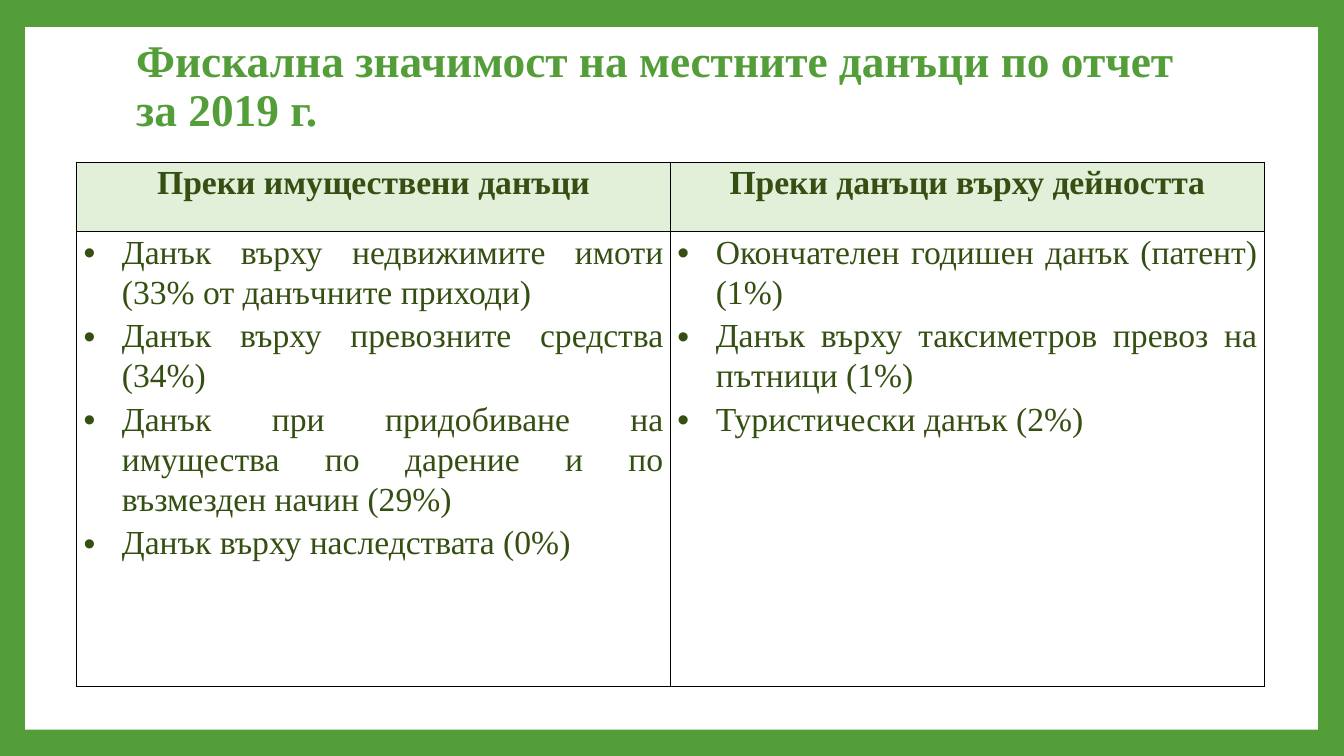
from dataclasses import dataclass

from lxml.etree import SubElement
from pptx import Presentation
from pptx.dml.color import RGBColor
from pptx.enum.shapes import MSO_SHAPE
from pptx.enum.text import MSO_ANCHOR, MSO_AUTO_SIZE, PP_ALIGN
from pptx.oxml import parse_xml
from pptx.oxml.ns import nsdecls, qn
from pptx.util import Inches, Pt


@dataclass(frozen=True)
class Theme:
    green: RGBColor = RGBColor(0x54, 0x9E, 0x39)
    dark_green: RGBColor = RGBColor(0x35, 0x4F, 0x12)
    pale_green: RGBColor = RGBColor(0xE2, 0xEF, 0xD9)
    white: RGBColor = RGBColor(0xFF, 0xFF, 0xFF)
    border: RGBColor = RGBColor(0, 0, 0)
    font: str = "Times New Roman"
    title_size: float = 32.4
    table_size: float = 24


@dataclass(frozen=True)
class TaxGroup:
    heading: str
    taxes: tuple[str, ...]


THEME = Theme()
TITLE = "Фискална значимост на местните данъци по отчет за 2019 г."
TAX_GROUPS = (
    TaxGroup("Преки имуществени данъци", (
        "Данък върху недвижимите имоти (33% от данъчните приходи)",
        "Данък върху превозните средства (34%)",
        "Данък при придобиване на имущества по дарение и по възмезден начин (29%)",
        "Данък върху наследствата (0%)",
    )),
    TaxGroup("Преки данъци върху дейността", (
        "Окончателен годишен данък (патент) (1%)",
        "Данък върху таксиметров превоз на пътници (1%)",
        "Туристически данък (2%)",
    )),
)
ROW_HEIGHTS = (0.69, 4.51)
CELL_FORMAT = {"margin_left": Inches(0.07), "margin_right": Inches(0.07),
               "margin_top": 0, "margin_bottom": 0}
CELL_PARAGRAPH = {"line_spacing": 1.07, "space_before": Pt(0), "space_after": Pt(3)}


def apply_format(target: object, values: dict) -> None:
    for attribute, value in values.items():
        setattr(target, attribute, value)


def style_font(font, size: float, color: RGBColor, bold: bool) -> None:
    apply_format(font, {"name": THEME.font, "size": Pt(size), "bold": bold})
    font.color.rgb = color


def add_bullet(paragraph) -> None:
    properties = paragraph._p.get_or_add_pPr()
    properties.set("marL", str(Inches(0.38)))
    properties.set("indent", str(-Inches(0.38)))
    SubElement(properties, qn("a:buFont")).set("typeface", "Arial")
    SubElement(properties, qn("a:buChar")).set("char", "•")


def add_borders(cell) -> None:
    properties = cell._tc.get_or_add_tcPr()
    for position, side in enumerate(("lnL", "lnR", "lnT", "lnB")):
        properties.insert(position, parse_xml(
            f'<a:{side} {nsdecls("a")} w="{Pt(1)}"><a:solidFill>'
            f'<a:srgbClr val="{THEME.border}"/></a:solidFill></a:{side}>'))


def fill_cell(cell, lines: tuple[str, ...], is_heading: bool) -> None:
    apply_format(cell, CELL_FORMAT)
    cell.fill.solid()
    cell.fill.fore_color.rgb = THEME.pale_green if is_heading else THEME.white
    add_borders(cell)
    cell.text = "\n".join(lines)
    for paragraph in cell.text_frame.paragraphs:
        apply_format(paragraph, CELL_PARAGRAPH)
        paragraph.alignment = PP_ALIGN.CENTER if is_heading else PP_ALIGN.JUSTIFY
        style_font(paragraph.runs[0].font, THEME.table_size, THEME.dark_green, is_heading)
        if not is_heading:
            add_bullet(paragraph)


def add_title(slide):
    title = slide.shapes.title
    apply_format(title, {"left": Inches(1.25), "top": Inches(0.37),
                         "width": Inches(10.8), "height": Inches(0.99)})
    frame = title.text_frame
    frame.text = TITLE
    apply_format(frame, {"word_wrap": True, "auto_size": MSO_AUTO_SIZE.NONE,
                         "vertical_anchor": MSO_ANCHOR.MIDDLE})
    heading = frame.paragraphs[0]
    apply_format(heading, {"alignment": PP_ALIGN.LEFT, "line_spacing": 0.9,
                           "space_before": Pt(0)})
    style_font(heading.runs[0].font, THEME.title_size, THEME.green, True)
    return title


def add_panel(slide, title) -> None:
    panel = slide.shapes.add_shape(MSO_SHAPE.RECTANGLE, Inches(0.25), Inches(0.27),
                                   Inches(12.82), Inches(6.97))
    panel.shadow.inherit = False
    panel.fill.solid()
    panel.fill.fore_color.rgb = THEME.white
    panel.line.fill.background()
    title.element.addprevious(panel.element)  # keep the panel behind the title


def add_tax_table(slide) -> None:
    taxes = slide.shapes.add_table(
        len(ROW_HEIGHTS), len(TAX_GROUPS), Inches(0.76), Inches(1.61),
        Inches(11.78), Inches(sum(ROW_HEIGHTS))).table
    apply_format(taxes, {"first_row": False, "horz_banding": False})
    for row, height in zip(taxes.rows, ROW_HEIGHTS):
        row.height = Inches(height)
    for column, group in enumerate(TAX_GROUPS):
        fill_cell(taxes.cell(0, column), (group.heading,), True)
        fill_cell(taxes.cell(1, column), group.taxes, False)


def main() -> None:
    deck = Presentation()
    apply_format(deck, {"slide_width": Inches(13.33), "slide_height": Inches(7.5)})
    slide = deck.slides.add_slide(deck.slide_layouts.get_by_name("Title Only"))

    # Green frame around a white panel
    slide.background.fill.solid()
    slide.background.fill.fore_color.rgb = THEME.green
    title = add_title(slide)
    add_panel(slide, title)

    # Tax groups side by side
    add_tax_table(slide)
    deck.save("out.pptx")


if __name__ == "__main__":
    main()
